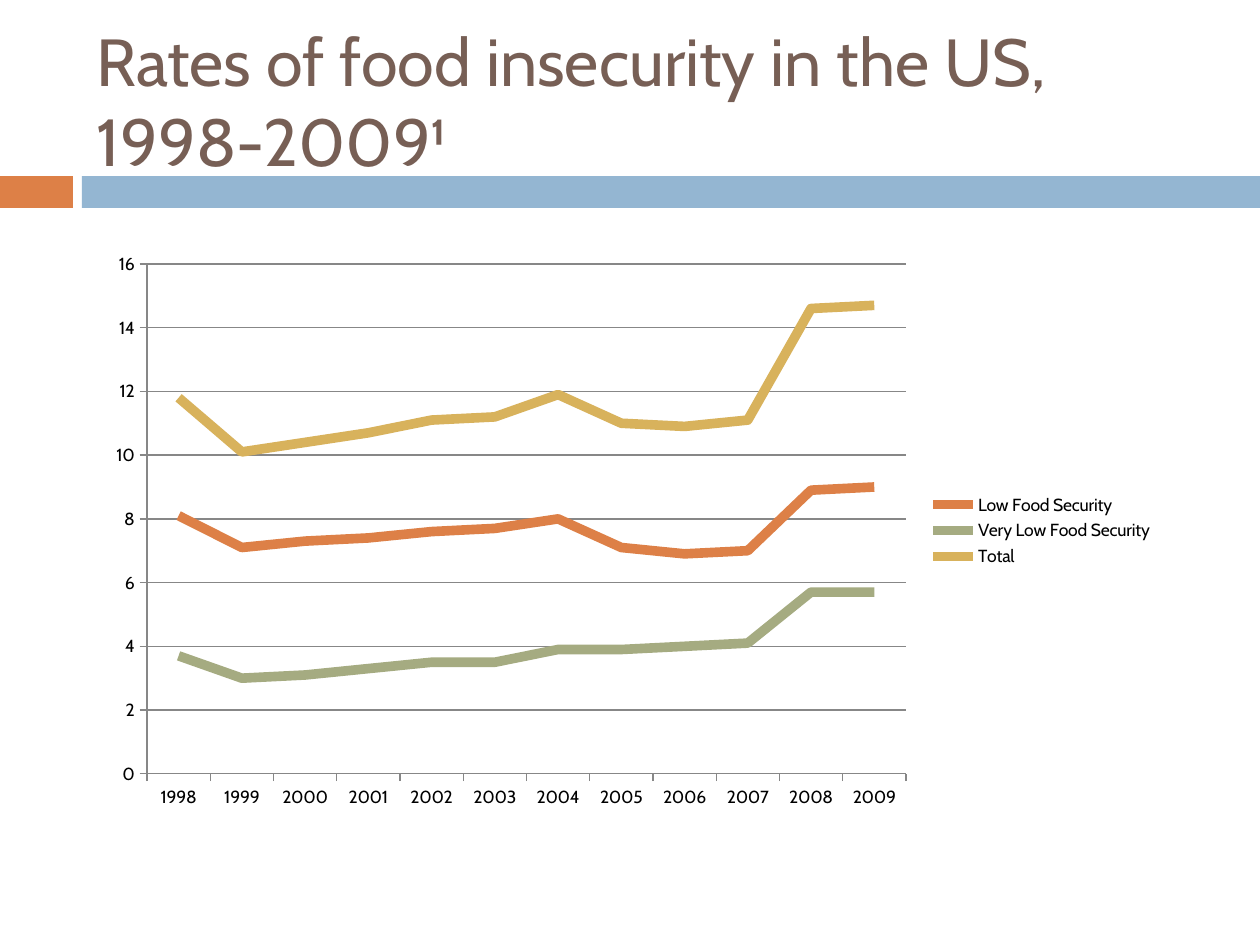
from dataclasses import dataclass

from lxml.etree import SubElement
from pptx import Presentation
from pptx.chart.data import CategoryChartData
from pptx.dml.color import RGBColor
from pptx.enum.chart import XL_CHART_TYPE, XL_LEGEND_POSITION, XL_MARKER_STYLE, XL_TICK_MARK
from pptx.enum.shapes import MSO_SHAPE
from pptx.enum.text import MSO_ANCHOR, MSO_AUTO_SIZE, PP_ALIGN
from pptx.oxml.ns import qn
from pptx.util import Pt

EMU_PER_PX = 914400 / 126
FONT = "Cabin"
COLORS = {
    "orange": "DD8047",
    "blue": "94B6D2",
    "green": "A5AB81",
    "gold": "D8B25C",
    "brown": "775F55",
    "grid": "878787",
    "black": "000000",
}


@dataclass
class Box:
    left: int
    top: int
    width: int
    height: int

    def emu(self) -> list[int]:
        return [px(n) for n in (self.left, self.top, self.width, self.height)]


@dataclass
class Band:
    box: Box
    color: str


@dataclass
class Series:
    name: str
    values: list[float]
    color: str


BANDS = [Band(Box(0, 176, 73, 32), "orange"), Band(Box(82, 176, 1178, 32), "blue")]
TITLE_BOX = Box(84, 32, 1124, 136)
CHART_BOX = Box(95, 242, 1071, 577)
PLOT_BOX = Box(147, 264, 759, 510)
YEARS = [str(year) for year in range(1998, 2010)]
SERIES = [
    Series("Low Food Security",
           [8.1, 7.1, 7.3, 7.4, 7.6, 7.7, 8, 7.1, 6.9, 7, 8.9, 9], "orange"),
    Series("Very Low Food Security",
           [3.7, 3, 3.1, 3.3, 3.5, 3.5, 3.9, 3.9, 4, 4.1, 5.7, 5.7], "green"),
    Series("Total",
           [11.8, 10.1, 10.4, 10.7, 11.1, 11.2, 11.9, 11, 10.9, 11.1, 14.6, 14.7], "gold"),
]


def px(length: int) -> int:
    return round(length * EMU_PER_PX)


def rgb(name: str) -> RGBColor:
    return RGBColor.from_string(COLORS[name])


def format_font(font, *, size: int, color: str) -> None:
    font.name, font.size, font.bold = FONT, Pt(size), False
    font.color.rgb = rgb(color)


def write_text(frame, lines: list[str], *, size: int, color: str) -> None:
    para = frame.paragraphs[0]
    para.alignment = PP_ALIGN.LEFT
    for index, line in enumerate(lines):
        if index:
            para.add_line_break()
        span = para.add_run()
        span.text = line
        format_font(span.font, size=size, color=color)


def draw_band(page, band: Band) -> None:
    shape = page.shapes.add_shape(MSO_SHAPE.RECTANGLE, *band.box.emu())
    shape.shadow.inherit = False
    shape.fill.solid()
    shape.fill.fore_color.rgb = rgb(band.color)
    shape.line.fill.background()


def draw_title(page) -> None:
    title = page.shapes.title
    title.left, title.top, title.width, title.height = TITLE_BOX.emu()
    frame = title.text_frame
    frame.word_wrap = True
    frame.auto_size = MSO_AUTO_SIZE.NONE
    frame.vertical_anchor = MSO_ANCHOR.MIDDLE
    write_text(frame, ["Rates of food insecurity in the US, ", "1998-2009¹"],
               size=38, color="brown")


def place_plot(chart, plot: Box, frame: Box) -> None:
    """Fix the inner plot area as fractions of the chart frame."""
    area = chart.plots[0]._element.getparent()
    for old in area.findall(qn("c:layout")):
        area.remove(old)
    layout = SubElement(area, qn("c:layout"))
    area.insert(0, layout)
    manual = SubElement(layout, qn("c:manualLayout"))
    settings = {
        "layoutTarget": "inner",
        "xMode": "edge",
        "yMode": "edge",
        "x": (plot.left - frame.left) / frame.width,
        "y": (plot.top - frame.top) / frame.height,
        "w": plot.width / frame.width,
        "h": plot.height / frame.height,
    }
    for tag, value in settings.items():
        SubElement(manual, qn(f"c:{tag}")).set("val", str(value))


def format_line(line, *, color: str, width: float) -> None:
    line.color.rgb = rgb(color)
    line.width = Pt(width)


def draw_chart(page) -> None:
    data = CategoryChartData()
    data.categories = YEARS
    for item in SERIES:
        data.add_series(item.name, item.values)
    chart = page.shapes.add_chart(XL_CHART_TYPE.LINE, *CHART_BOX.emu(), data).chart
    chart.has_title = False
    format_font(chart.font, size=10, color="black")
    place_plot(chart, PLOT_BOX, CHART_BOX)

    # Lines
    chart.plots[0].vary_by_categories = False
    for series, item in zip(chart.plots[0].series, SERIES):
        series.smooth = False
        series.marker.style = XL_MARKER_STYLE.NONE
        format_line(series.format.line, color=item.color, width=5.5)

    # Axes and gridlines
    for axis in (chart.category_axis, chart.value_axis):
        axis.major_tick_mark = XL_TICK_MARK.OUTSIDE
        axis.minor_tick_mark = XL_TICK_MARK.NONE
        format_line(axis.format.line, color="grid", width=0.75)
    values = chart.value_axis
    values.minimum_scale, values.maximum_scale, values.major_unit = 0, 16, 2
    values.has_major_gridlines = True
    format_line(values.major_gridlines.format.line, color="grid", width=0.75)

    # Legend
    chart.has_legend = True
    chart.legend.position = XL_LEGEND_POSITION.RIGHT
    chart.legend.include_in_layout = False


def main() -> None:
    deck = Presentation()
    deck.slide_width, deck.slide_height = px(1260), px(945)
    page = deck.slides.add_slide(deck.slide_layouts[5])
    for band in BANDS:
        draw_band(page, band)
    draw_title(page)
    draw_chart(page)
    deck.save("out.pptx")


if __name__ == "__main__":
    main()
